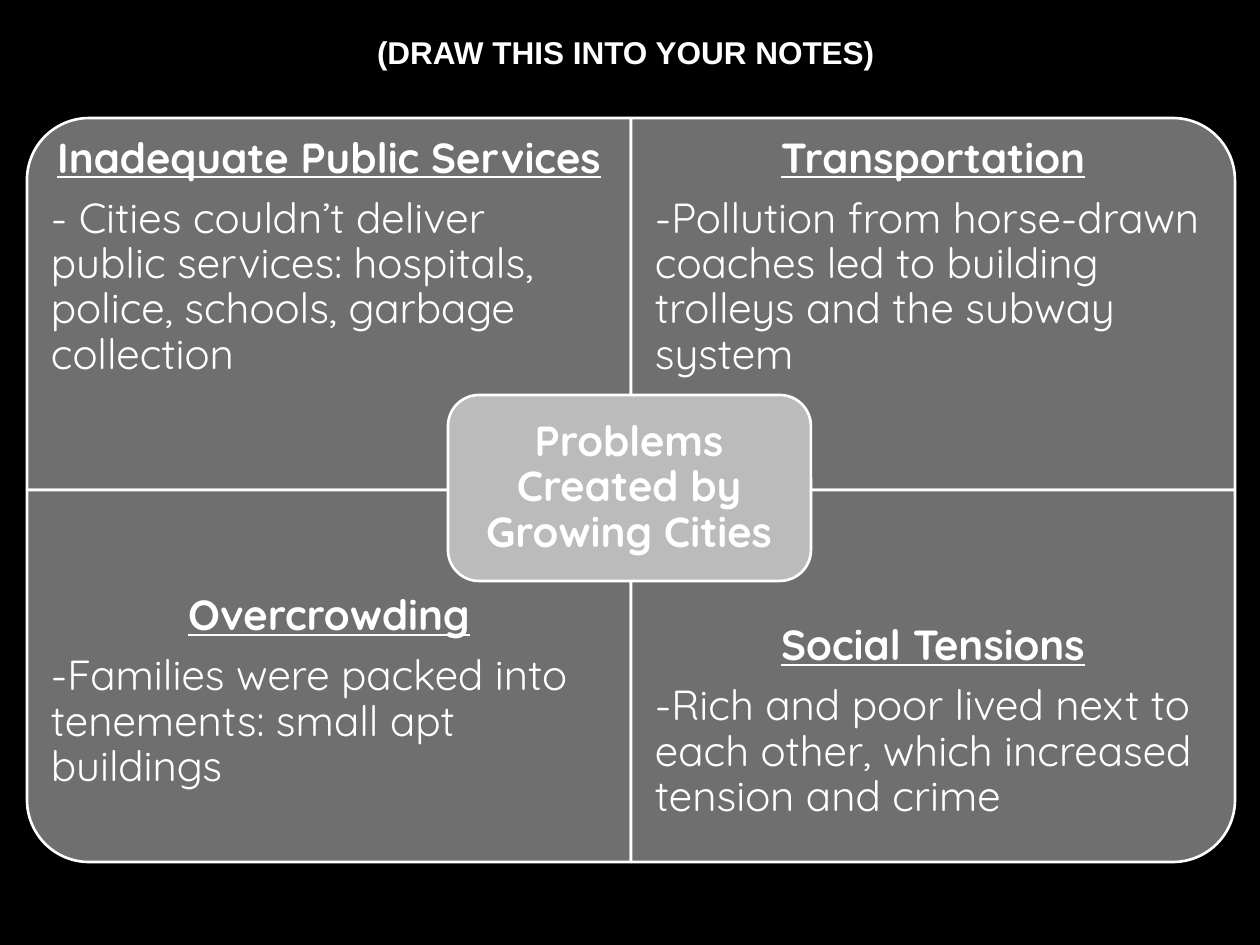
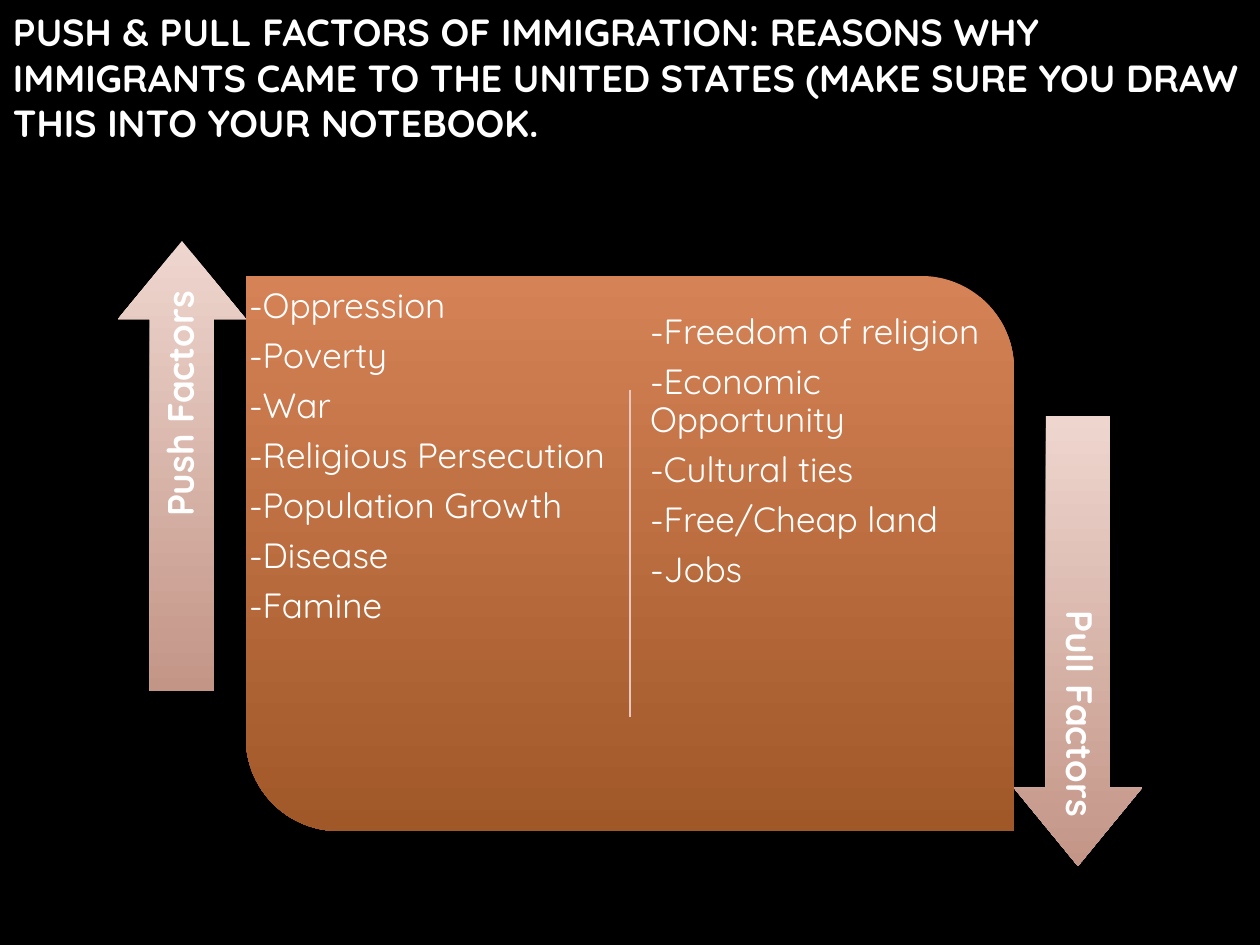
import pptx
import pptx.dml.color
import pptx.enum.shapes
import pptx.enum.text
import pptx.oxml.ns
import pptx.util
from dataclasses import dataclass
from typing import Any, Optional
from lxml import etree

RGBColor = pptx.dml.color.RGBColor
SHAPE = pptx.enum.shapes.MSO_SHAPE
ALIGN = pptx.enum.text.PP_ALIGN
ANCHOR = pptx.enum.text.MSO_ANCHOR

# Shared look
PX_PER_INCH = 126
BLACK = RGBColor(0x00, 0x00, 0x00)
WHITE = RGBColor(0xFF, 0xFF, 0xFF)
DARK_GRAY = RGBColor(0x6F, 0x6F, 0x6F)
LIGHT_GRAY = RGBColor(0xBB, 0xBB, 0xBB)
DIVIDER_PINK = RGBColor(0xE9, 0xC9, 0xBF)
PANEL_COLORS = (RGBColor(0xD4, 0x82, 0x56), RGBColor(0xA1, 0x58, 0x28))
ARROW_COLORS = (RGBColor(0xEE, 0xD6, 0xCE), RGBColor(0xC3, 0x95, 0x87))
BODY_FONT = "Quicksand"
OUTLINE_PT = 1.5


@dataclass(frozen=True)
class Box:
    left: int
    top: int
    width: int
    height: int

    def emu(self) -> list[int]:
        return [px(n) for n in (self.left, self.top, self.width, self.height)]


@dataclass(frozen=True)
class Line:
    text: str
    size: float
    bold: bool = False
    underline: bool = False
    align: Any = ALIGN.LEFT
    font: str = BODY_FONT
    spacing: float = 0.9
    after: float = 0.35  # share of the text size


@dataclass(frozen=True)
class Quadrant:
    heading: str
    body: str
    column: int
    row: int
    rotation: int
    extra_bottom: int = 0


@dataclass(frozen=True)
class FactorArrow:
    label: str
    shape: Any
    box: Box
    label_box: Box
    rotation: int


@dataclass(frozen=True)
class FactorList:
    box: Box
    factors: tuple[str, ...]


QUADRANT_LEFT, QUADRANT_TOP = 27, 118
QUADRANT_WIDTH, QUADRANT_HEIGHT = 604, 372
QUADRANT_TEXT_HEIGHT = 279
QUADRANTS = (
    Quadrant("Inadequate Public Services",
             "- Cities couldn’t deliver public services: hospitals, police, "
             "schools, garbage collection", 0, 0, 270),
    Quadrant("Transportation",
             "-Pollution from horse-drawn coaches led to building trolleys "
             "and the subway system", 1, 0, 0),
    Quadrant("Overcrowding",
             "-Families were packed into tenements: small apt buildings",
             0, 1, 180, extra_bottom=60),
    Quadrant("Social Tensions",
             "-Rich and poor lived next to each other, which increased "
             "tension and crime", 1, 1, 90),
)
ARROWS = (
    FactorArrow("Push Factors", SHAPE.UP_ARROW, Box(118, 241, 128, 450),
                Box(-24, 454, 412, 64), 270),
    FactorArrow("Pull Factors", SHAPE.DOWN_ARROW, Box(1014, 416, 128, 450),
                Box(872, 590, 412, 64), 90),
)
FACTOR_LISTS = (
    FactorList(Box(239, 278, 396, 552),
               ("-Oppression", "-Poverty", "-War", "-Religious Persecution",
                "-Population Growth", "-Disease", "-Famine")),
    FactorList(Box(640, 304, 364, 499),
               ("-Freedom of religion", "-Economic Opportunity",
                "-Cultural ties", "-Free/Cheap land", "-Jobs")),
)


def px(length: int) -> int:
    return round(length * pptx.util.Inches(1) / PX_PER_INCH)


def set_all(target: Any, values: dict[str, Any]) -> None:
    for name, value in values.items():
        setattr(target, name, value)


def place(shape: Any, box: Box) -> None:
    set_all(shape, dict(zip(("left", "top", "width", "height"), box.emu())))


def write(shape: Any, lines: list[Line], inset: tuple[int, int, int, int],
          anchor: Any = ANCHOR.MIDDLE) -> None:
    """Fill a text frame; the inset is left, top, right, bottom."""
    frame = shape.text_frame
    sides = ("margin_left", "margin_top", "margin_right", "margin_bottom")
    set_all(frame, {"word_wrap": True, "vertical_anchor": anchor,
                    "auto_size": pptx.enum.text.MSO_AUTO_SIZE.NONE,
                    **dict(zip(sides, map(px, inset)))})
    for index, line in enumerate(lines):
        paragraph = frame.paragraphs[0] if index == 0 else frame.add_paragraph()
        set_all(paragraph, {"alignment": line.align,
                            "line_spacing": line.spacing,
                            "space_before": pptx.util.Pt(0),
                            "space_after": pptx.util.Pt(line.size * line.after)})
        run = paragraph.add_run()
        run.text = line.text
        set_all(run.font, {"name": line.font, "size": pptx.util.Pt(line.size),
                           "bold": line.bold, "underline": line.underline})
        run.font.color.rgb = WHITE


def add_text(slide: Any, box: Box, lines: list[Line],
             inset: tuple[int, int, int, int], rotation: int = 0) -> None:
    text_box = slide.shapes.add_textbox(*box.emu())
    text_box.rotation = rotation
    write(text_box, lines, inset)


def add_title(slide: Any, box: Box, line: Line) -> None:
    place(slide.shapes.title, box)
    write(slide.shapes.title, [line], (13, 6, 13, 6))


def add_block(slide: Any, kind: Any, box: Box, colors: tuple[RGBColor, ...],
              outline: Optional[RGBColor] = None,
              adjustments: tuple[float, ...] = ()) -> Any:
    """One colour gives a solid fill, two a gradient from top to bottom."""
    shape = slide.shapes.add_shape(kind, *box.emu())
    shape.shadow.inherit = False
    if len(colors) == 1:
        shape.fill.solid()
        shape.fill.fore_color.rgb = colors[0]
    else:
        shape.fill.gradient()
        shape.fill.gradient_angle = 270
        for stop, color in zip(shape.fill.gradient_stops, colors):
            stop.color.rgb = color
    if outline is None:
        shape.line.fill.background()
    else:
        shape.line.color.rgb = outline
        shape.line.width = pptx.util.Pt(OUTLINE_PT)
    for index, value in enumerate(adjustments):
        shape.adjustments[index] = value
    return shape


def add_divider(slide: Any, x: int, top: int, bottom: int) -> Any:
    divider = slide.shapes.add_connector(
        pptx.enum.shapes.MSO_CONNECTOR.STRAIGHT, px(x), px(top), px(x), px(bottom))
    divider.line.color.rgb = DIVIDER_PINK
    divider.line.width = pptx.util.Pt(OUTLINE_PT)
    etree.SubElement(divider._element.spPr, pptx.oxml.ns.qn("a:effectLst"))
    return divider


def remove_bullets(shape: Any) -> None:
    for paragraph in shape.text_frame.paragraphs:
        properties = paragraph._p.get_or_add_pPr()
        properties.set("marL", "0")
        properties.set("indent", "0")
        etree.SubElement(properties, pptx.oxml.ns.qn("a:buNone"))


def add_quadrant(slide: Any, quadrant: Quadrant) -> None:
    left = QUADRANT_LEFT + quadrant.column * QUADRANT_WIDTH
    top = QUADRANT_TOP + quadrant.row * QUADRANT_HEIGHT
    # A quarter turn swaps width and height around the same centre
    width, height = QUADRANT_WIDTH, QUADRANT_HEIGHT
    if quadrant.rotation % 180:
        width, height = height, width
    box = Box(left + (QUADRANT_WIDTH - width) // 2,
              top + (QUADRANT_HEIGHT - height) // 2, width, height)
    block = add_block(slide, SHAPE.ROUND_1_RECTANGLE, box, (DARK_GRAY,), WHITE)
    block.rotation = quadrant.rotation

    # Text keeps to the outer part, clear of the centre label
    text_top = top + quadrant.row * (QUADRANT_HEIGHT - QUADRANT_TEXT_HEIGHT)
    add_text(slide, Box(left, text_top, QUADRANT_WIDTH, QUADRANT_TEXT_HEIGHT),
             [Line(quadrant.heading, 24, True, True, ALIGN.CENTER),
              Line(quadrant.body, 24)],
             (24, 24, 24, 24 + quadrant.extra_bottom))


def build_city_problems(presentation: Any) -> None:
    slide = presentation.slides.add_slide(presentation.slide_layouts[5])
    add_title(slide, Box(364, 26, 534, 51),
              Line("(DRAW THIS INTO YOUR NOTES)", 18, True, font="Arial",
                   spacing=1.0, after=0))
    for quadrant in QUADRANTS:
        add_quadrant(slide, quadrant)

    # Centre label
    add_block(slide, SHAPE.ROUNDED_RECTANGLE, Box(448, 395, 363, 186),
              (LIGHT_GRAY,), WHITE)
    add_text(slide, Box(457, 404, 344, 168),
             [Line("Problems Created by Growing Cities", 24, True,
                   align=ALIGN.CENTER)], (12, 12, 12, 12))


def build_immigration_factors(presentation: Any) -> None:
    slide = presentation.slides.add_slide(presentation.slide_layouts[3])
    add_title(slide, Box(0, 0, 1260, 154),
              Line("PUSH & PULL FACTORS OF IMMIGRATION: REASONS WHY IMMIGRANTS "
                   "CAME TO THE UNITED STATES (MAKE SURE YOU DRAW THIS INTO "
                   "YOUR NOTEBOOK.", 21.6, True, spacing=1.0, after=0))

    # Panel and divider lie behind the lists
    panel = add_block(slide, SHAPE.ROUND_2_DIAG_RECTANGLE,
                      Box(246, 276, 768, 555), PANEL_COLORS,
                      adjustments=(0, 0.167))
    divider = add_divider(slide, 630, 390, 717)
    for shape in (panel, divider):
        slide.shapes.title._element.addprevious(shape._element)

    # Factor lists
    bodies = [shape for shape in slide.placeholders
              if shape.placeholder_format.idx in (1, 2)]
    for body, factor_list in zip(bodies, FACTOR_LISTS):
        place(body, factor_list.box)
        write(body, [Line(factor, 20) for factor in factor_list.factors],
              (10, 10, 10, 10), ANCHOR.TOP)
        remove_bullets(body)

    # Arrows with turned labels
    for arrow in ARROWS:
        add_block(slide, arrow.shape, arrow.box, ARROW_COLORS,
                  adjustments=(0.5, 0.61))
        add_text(slide, arrow.label_box,
                 [Line(arrow.label, 21, True, align=ALIGN.RIGHT)],
                 (11, 11, 11, 11), arrow.rotation)


def main() -> None:
    presentation = pptx.Presentation()
    presentation.slide_width = px(1260)
    presentation.slide_height = px(945)
    background = presentation.slide_master.background.fill
    background.solid()
    background.fore_color.rgb = BLACK
    build_city_problems(presentation)
    build_immigration_factors(presentation)
    presentation.save("out.pptx")


if __name__ == "__main__":
    main()
